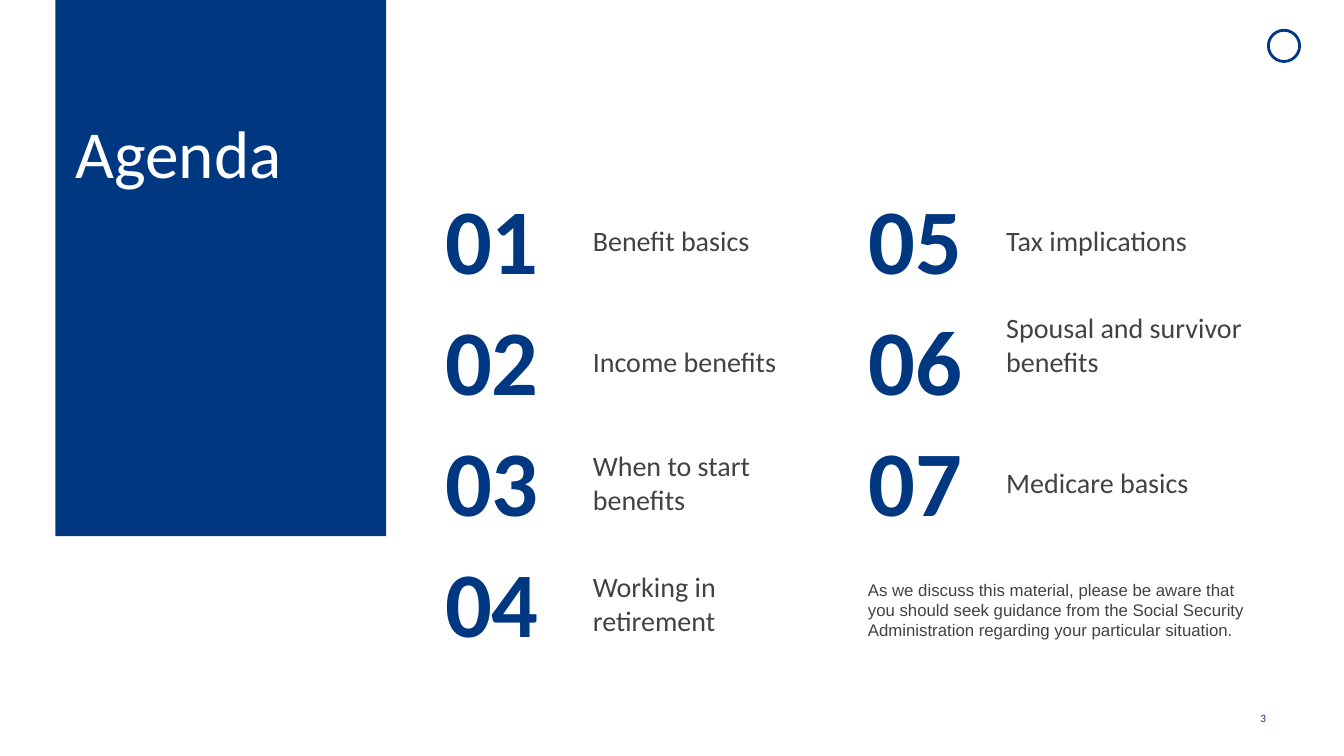
from pptx import Presentation
from pptx.dml.color import RGBColor
from pptx.enum.shapes import MSO_SHAPE
from pptx.enum.text import MSO_ANCHOR as Anchor, MSO_AUTO_SIZE as AutoSize, PP_ALIGN as Align
from pptx.util import Inches, Pt

NAVY, GREY, WHITE = "003781", "424242", "FFFFFF"
TOPICS = [
    "Benefit basics",
    "Income benefits",
    "When to start benefits",
    "Working in retirement",
    "Tax implications",
    "Spousal and survivor benefits",
    "Medicare basics",
]
RAISED_TOPIC = "Spousal and survivor benefits"
ROWS = 4
COLUMN_WIDTHS = [1.6, 2.7, 1.4, 2.7]
ROW_HEIGHT = 1.2
NOTE = ("As we discuss this material, please be aware that you should seek guidance from "
        "the Social Security Administration regarding your particular situation.")


def color(hex_string):
    return RGBColor.from_string(hex_string)


def box(*lengths):
    return [Inches(length) for length in lengths]


def set_margins(target, left, top, right, bottom):
    """Set the inner margins of a text frame or a table cell, in inches."""
    target.margin_left, target.margin_top, target.margin_right, target.margin_bottom = box(
        left, top, right, bottom)


def write(frame, text, size, hex_string, font="Calibri", bold=False, align=Align.LEFT):
    paragraph = frame.paragraphs[0]
    paragraph.alignment = align
    run = paragraph.add_run()
    run.text = text
    run.font.name = font
    run.font.size = Pt(size)
    run.font.bold = bold
    run.font.color.rgb = color(hex_string)
    return paragraph


def add_title_panel(slide, text):
    panel = slide.shapes.title
    panel.left, panel.top, panel.width, panel.height = box(0.55, 0, 3.28, 5.32)
    panel.fill.solid()
    panel.fill.fore_color.rgb = color(NAVY)
    frame = panel.text_frame
    frame.auto_size = AutoSize.NONE
    frame.vertical_anchor = Anchor.TOP
    set_margins(frame, 0.2, 1.1, 0.3, 0.05)
    write(frame, text, 48, WHITE).space_before = Pt(6)


def add_text(slide, place, text, size, hex_string, font):
    frame = slide.shapes.add_textbox(*box(*place)).text_frame
    frame.word_wrap = True
    write(frame, text, size, hex_string, font)
    return frame


def add_badge(slide):
    badge = slide.shapes.add_shape(MSO_SHAPE.OVAL, *box(12.58, 0.3, 0.31, 0.31))
    badge.shadow.inherit = False
    badge.fill.background()
    badge.line.color.rgb = color(NAVY)
    badge.line.width = Pt(2)


def add_agenda(slide):
    table = slide.shapes.add_table(
        ROWS, len(COLUMN_WIDTHS),
        *box(4.08, 1.8, sum(COLUMN_WIDTHS), ROWS * ROW_HEIGHT)).table
    table.first_row = table.horz_banding = False
    for column, width in zip(table.columns, COLUMN_WIDTHS):
        column.width = Inches(width)
    for cell in table.iter_cells():
        cell.fill.background()
        cell.vertical_anchor = Anchor.MIDDLE

    for index, topic in enumerate(TOPICS):
        pair, row = divmod(index, ROWS)
        number_cell, topic_cell = (table.cell(row, 2 * pair + side) for side in (0, 1))
        write(number_cell.text_frame, f"{index + 1:02d}", 66, NAVY, bold=True, align=Align.CENTER)
        bottom = 0.39 if topic == RAISED_TOPIC else 0.05
        set_margins(topic_cell, 0.2, 0.05, 0.1, bottom)
        write(topic_cell.text_frame, topic, 20, GREY)


def main():
    presentation = Presentation()
    presentation.slide_width, presentation.slide_height = box(13.33, 7.5)
    slide = presentation.slides.add_slide(presentation.slide_layouts[5])

    add_badge(slide)
    page_number = add_text(slide, (12.5, 6.92, 0.4, 0.4), "3", 8, NAVY, "Calibri")
    page_number.vertical_anchor = Anchor.MIDDLE
    set_margins(page_number, 0, 0.06, 0, 0.06)
    add_title_panel(slide, "Agenda")
    add_agenda(slide)
    add_text(slide, (8.51, 5.7, 3.97, 0.71), NOTE, 12, GREY, "Arial")

    presentation.save("out.pptx")


if __name__ == "__main__":
    main()
